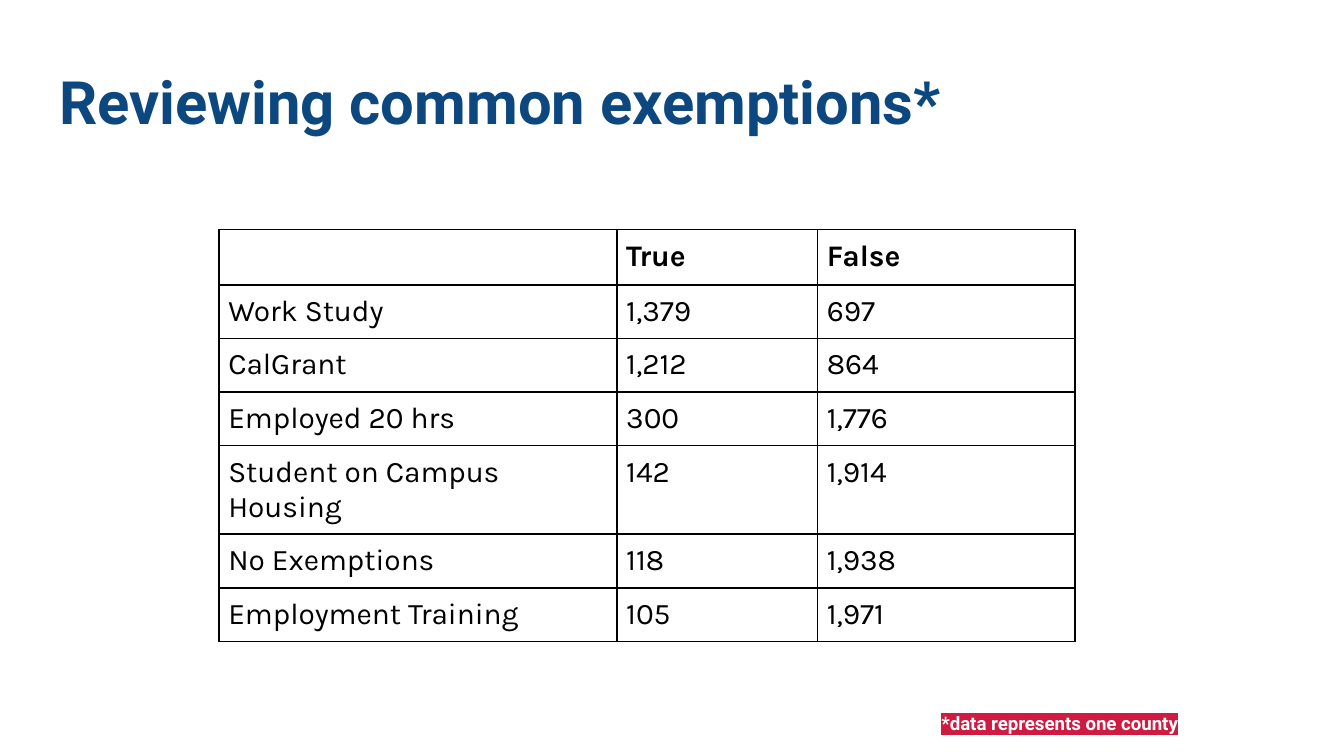
from lxml import etree
from pptx import Presentation
from pptx.dml.color import RGBColor
from pptx.enum.text import MSO_ANCHOR, MSO_AUTO_SIZE, PP_ALIGN
from pptx.oxml.ns import qn
from pptx.util import Pt

BOTTOM = MSO_ANCHOR.BOTTOM
NO_AUTOFIT = MSO_AUTO_SIZE.NONE
LEFT, RIGHT = PP_ALIGN.LEFT, PP_ALIGN.RIGHT

TITLE = "Reviewing common exemptions*"
FOOTNOTE = "*data represents one county"
ROWS = [
    ("", "True", "False"),
    ("Work Study", "1,379", "697"),
    ("CalGrant", "1,212", "864"),
    ("Employed 20 hrs", "300", "1,776"),
    ("Student on Campus Housing", "142", "1,914"),
    ("No Exemptions", "118", "1,938"),
    ("Employment Training", "105", "1,971"),
]
TITLE_BOX = (24.5, 8, 671, 72.5)
FOOTNOTE_BOX = (265, 372, 373, 28.4)
TABLE_LEFT, TABLE_TOP = 117.3, 123
COL_WIDTHS = (213.2, 107.5, 138)
ROW_HEIGHT, TALL_ROW_HEIGHT, TALL_ROW = 28.7, 47.5, 4
BOX_INSET, CELL_INSET = 7.2, 5

THEME = {
    "title": {"font": "Roboto", "size": 32, "color": "0C477F", "bold": True},
    "footnote": {"font": "Roboto", "size": 10, "color": "FFFFFF", "bold": True},
    "header": {"font": "Karla", "size": 16, "color": "000000", "bold": True},
    "body": {"font": "Karla", "size": 16, "color": "000000", "bold": False},
    "highlight": "CF1B41",
    "border": "000000",
}


def add_run(p, text, style):
    r = p.add_run()
    r.text = text
    r.font.name = style["font"]
    r.font.size = Pt(style["size"])
    r.font.bold = style["bold"]
    r.font.color.rgb = RGBColor.from_string(style["color"])
    return r


def set_insets(target, inset):
    target.margin_left = target.margin_right = Pt(inset)
    target.margin_top = target.margin_bottom = Pt(inset)


def fill_text_box(sp, text, style, align):
    tf = sp.text_frame
    tf.word_wrap = True
    tf.auto_size = NO_AUTOFIT
    tf.vertical_anchor = BOTTOM
    set_insets(tf, BOX_INSET)
    p = tf.paragraphs[0]
    p.alignment = align
    return add_run(p, text, style)


def add_solid_color(parent, tag, color):
    """Append a colour-bearing element and return it."""
    el = etree.SubElement(parent, qn(tag))
    etree.SubElement(el, qn("a:srgbClr"), val=color)
    return el


def highlight(run, color):
    r_pr = run.font._element
    mark = add_solid_color(r_pr, "a:highlight", color)
    r_pr.find(qn("a:solidFill")).addnext(mark)


def add_borders(cell, color):
    tc_pr = cell._tc.get_or_add_tcPr()
    for i, side in enumerate(("a:lnL", "a:lnR", "a:lnT", "a:lnB")):
        ln = etree.Element(qn(side), w=str(Pt(1)))
        add_solid_color(ln, "a:solidFill", color)
        tc_pr.insert(i, ln)


def add_exemption_table(s):
    frame = s.shapes.add_table(
        len(ROWS), len(COL_WIDTHS), Pt(TABLE_LEFT), Pt(TABLE_TOP),
        Pt(sum(COL_WIDTHS)),
        Pt(ROW_HEIGHT * (len(ROWS) - 1) + TALL_ROW_HEIGHT))
    table = frame.table
    table.first_row = table.horz_banding = False
    for col, width in zip(table.columns, COL_WIDTHS):
        col.width = Pt(width)
    for i, values in enumerate(ROWS):
        table.rows[i].height = Pt(TALL_ROW_HEIGHT if i == TALL_ROW else ROW_HEIGHT)
        style = THEME["header" if i == 0 else "body"]
        for j, value in enumerate(values):
            cell = table.cell(i, j)
            cell.fill.background()
            set_insets(cell, CELL_INSET)
            add_borders(cell, THEME["border"])
            p = cell.text_frame.paragraphs[0]
            if value:
                add_run(p, value, style)
            else:
                etree.SubElement(p._p, qn("a:endParaRPr"), sz=str(style["size"] * 100))


def main():
    prs = Presentation()
    prs.slide_width, prs.slide_height = Pt(720), Pt(405)
    s = prs.slides.add_slide(prs.slide_layouts[5])

    title = s.shapes.title
    title.left, title.top, title.width, title.height = map(Pt, TITLE_BOX)
    fill_text_box(title, TITLE, THEME["title"], LEFT)

    footnote = s.shapes.add_textbox(*map(Pt, FOOTNOTE_BOX))
    r = fill_text_box(footnote, FOOTNOTE, THEME["footnote"], RIGHT)
    highlight(r, THEME["highlight"])

    add_exemption_table(s)
    prs.save("out.pptx")


if __name__ == "__main__":
    main()
